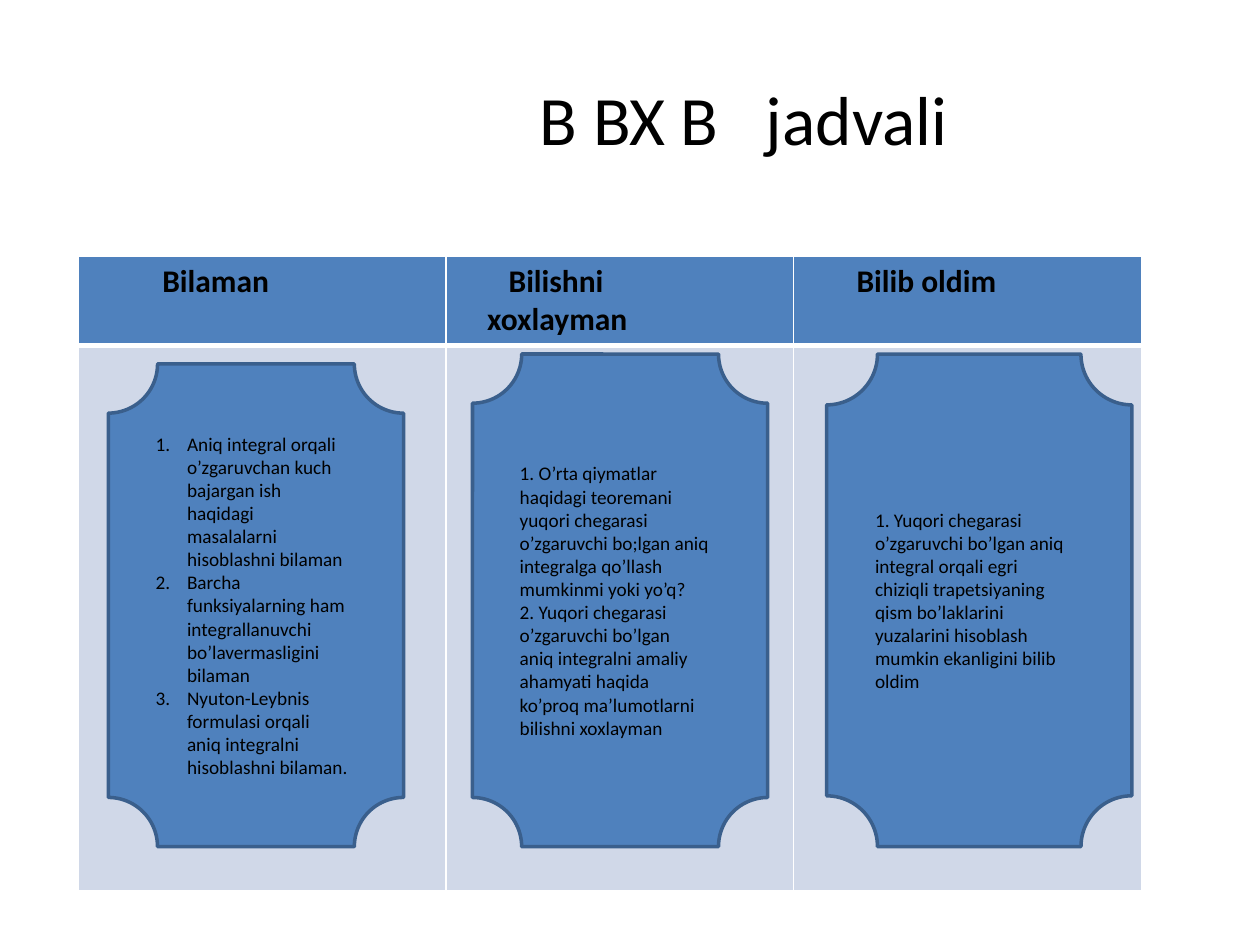
from dataclasses import dataclass

import lxml.etree
import pptx
import pptx.dml.color
import pptx.enum.shapes
import pptx.enum.text
import pptx.oxml.ns
import pptx.util

Pt = pptx.util.Pt
qn = pptx.oxml.ns.qn
ALIGN = pptx.enum.text.PP_ALIGN
MIDDLE = pptx.enum.text.MSO_ANCHOR.MIDDLE
BLACK, WHITE = "000000", "FFFFFF"
BLUE, PALE, EDGE = "4F81BD", "D0D8E8", "3A5F8C"


@dataclass
class Line:
    text: str
    indent: float


@dataclass
class Column:
    width: float
    heading: list[Line]


@dataclass
class Plaque:
    left: float
    top: float
    width: float
    height: float
    items: list[list[str]]
    numbered: bool = False


COLUMNS = [
    Column(210.2, [Line("Bilaman", 41)]),
    Column(198.8, [Line("Bilishni", 28.7), Line("xoxlayman", 16.4)]),
    Column(198.8, [Line("Bilib oldim", 28.7)]),
]

PLAQUES = [
    Plaque(61.9, 208, 168.7, 275.8, [
        ["Aniq integral orqali", "o’zgaruvchan kuch", "bajargan ish",
         "haqidagi", "masalalarni", "hisoblashni bilaman"],
        ["Barcha", "funksiyalarning ham", "integrallanuvchi",
         "bo’lavermasligini", "bilaman"],
        ["Nyuton-Leybnis", "formulasi orqali", "aniq integralni",
         "hisoblashni bilaman."],
    ], numbered=True),
    Plaque(270, 202.3, 168.7, 281.5, [
        ["1. O’rta qiymatlar", "haqidagi teoremani", "yuqori chegarasi",
         "o’zgaruvchi bo;lgan aniq", "integralga qo’llash",
         "mumkinmi yoki yo’q?"],
        ["2. Yuqori chegarasi", "o’zgaruvchi bo’lgan",
         "aniq integralni amaliy", "ahamyati haqida",
         "ko’proq ma’lumotlarni", "bilishni xoxlayman"],
    ]),
    Plaque(472.4, 202.3, 174.4, 281.5, [
        ["1. Yuqori chegarasi", "o’zgaruvchi bo’lgan aniq",
         "integral orqali egri", "chiziqli trapetsiyaning",
         "qism bo’laklarini", "yuzalarini hisoblash",
         "mumkin ekanligini bilib", "oldim"],
    ]),
]


def rgb(color: str) -> pptx.dml.color.RGBColor:
    return pptx.dml.color.RGBColor.from_string(color)


def paint(fill, color: str) -> None:
    fill.solid()
    fill.fore_color.rgb = rgb(color)


def add_run(p, text: str, size: float, bold: bool = False):
    r = p.add_run()
    r.text = text
    r.font.name = "Calibri"
    r.font.size = Pt(size)
    r.font.bold = bold
    r.font.color.rgb = rgb(BLACK)
    return r


def next_paragraph(tf, index: int):
    return tf.add_paragraph() if index else tf.paragraphs[0]


def set_indent(p, left: float, first: float = 0) -> None:
    pPr = p._p.get_or_add_pPr()
    pPr.set("marL", str(int(Pt(left))))
    pPr.set("indent", str(int(Pt(first))))


def number(p) -> None:
    set_indent(p, 18, -18)
    bullet = lxml.etree.SubElement(p._p.get_or_add_pPr(), qn("a:buAutoNum"))
    bullet.set("type", "arabicPeriod")


def add_title(s) -> None:
    tf = s.shapes.add_textbox(Pt(50.4), Pt(39.2), Pt(666), Pt(56.2)).text_frame
    tf.word_wrap = True
    tf.vertical_anchor = MIDDLE
    p = tf.paragraphs[0]
    p.alignment = ALIGN.CENTER
    set_indent(p, 83)
    add_run(p, "B BX B", 39.6)
    gap = add_run(p, " ", 39.6)
    gap.font._element.set("spc", "1800")
    add_run(p, "jadvali", 39.6)


def style_cell(cell, color: str, top: float, bottom: float) -> None:
    tcPr = cell._tc.get_or_add_tcPr()
    for side, width in zip("LRTB", (1, 1, top, bottom)):
        ln = lxml.etree.SubElement(tcPr, qn(f"a:ln{side}"), w=str(int(Pt(width))))
        solid = lxml.etree.SubElement(ln, qn("a:solidFill"))
        lxml.etree.SubElement(solid, qn("a:srgbClr"), val=WHITE)
    paint(cell.fill, color)


def add_table(s, columns: list[Column]) -> None:
    width = sum(c.width for c in columns)
    table = s.shapes.add_table(
        2, len(columns), Pt(44.6), Pt(146.3), Pt(width), Pt(362.6)).table
    table.rows[0].height, table.rows[1].height = Pt(51), Pt(311.6)
    for i, column in enumerate(columns):
        table.columns[i].width = Pt(column.width)
        head = table.cell(0, i)
        style_cell(head, BLUE, 1, 3)
        style_cell(table.cell(1, i), PALE, 3, 1)
        for j, line in enumerate(column.heading):
            p = next_paragraph(head.text_frame, j)
            set_indent(p, line.indent)
            add_run(p, line.text, 18, bold=True)


def add_plaque(s, plaque: Plaque) -> None:
    sp = s.shapes.add_shape(
        pptx.enum.shapes.MSO_SHAPE.PLAQUE, Pt(plaque.left), Pt(plaque.top),
        Pt(plaque.width), Pt(plaque.height))
    sp.shadow.inherit = False
    paint(sp.fill, BLUE)
    sp.line.color.rgb = rgb(EDGE)
    sp.line.width = Pt(2)
    tf = sp.text_frame
    tf.word_wrap = True
    tf.vertical_anchor = MIDDLE
    for i, item in enumerate(plaque.items):
        p = next_paragraph(tf, i)
        p.alignment = ALIGN.LEFT
        if plaque.numbered:
            number(p)
        for j, line in enumerate(item):
            if j:
                p.add_line_break()
            add_run(p, line, 11)


def main() -> None:
    prs = pptx.Presentation()
    prs.slide_width, prs.slide_height = Pt(720), Pt(540)
    s = prs.slides.add_slide(prs.slide_layouts[6])
    add_title(s)
    add_table(s, COLUMNS)
    for plaque in PLAQUES:
        add_plaque(s, plaque)
    prs.save("out.pptx")


if __name__ == "__main__":
    main()
